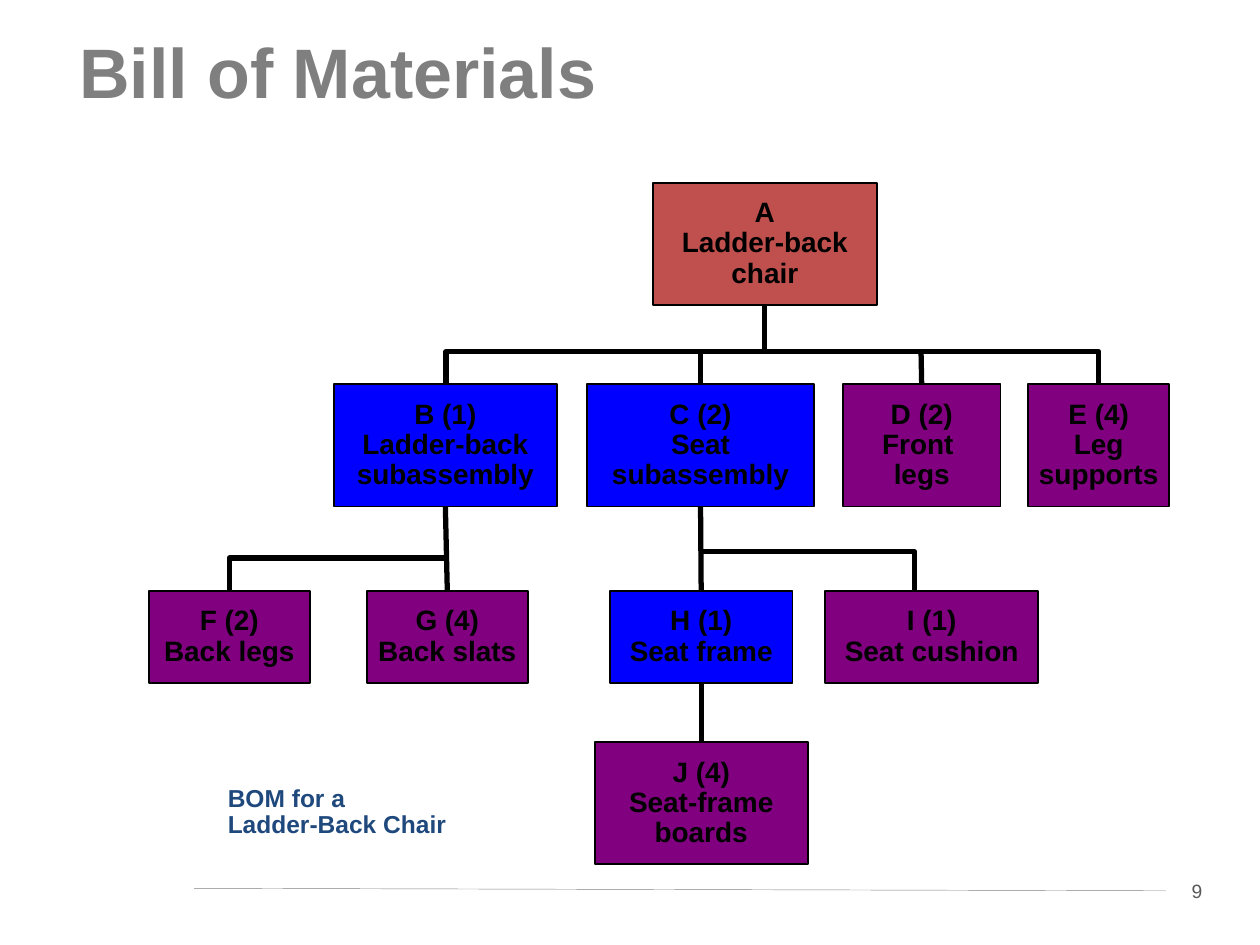
from lxml import etree
from pptx import Presentation
from pptx.dml.color import RGBColor
from pptx.enum.shapes import MSO_CONNECTOR as Connector, MSO_SHAPE as Shape
from pptx.enum.text import MSO_ANCHOR as Anchor, PP_ALIGN as Align
from pptx.oxml.ns import qn
from pptx.util import Inches, Pt

BLACK = RGBColor(0x00, 0x00, 0x00)
BLUE = RGBColor(0x00, 0x00, 0xFF)
PURPLE = RGBColor(0x80, 0x00, 0x80)
RED = RGBColor(0xC0, 0x50, 0x4D)
NAVY = RGBColor(0x1F, 0x49, 0x7D)
TITLE_GRAY = RGBColor(0x7F, 0x7F, 0x7F)
RULE_GRAY = RGBColor(0x80, 0x80, 0x80)
NUMBER_GRAY = RGBColor(0x59, 0x59, 0x59)

deck = Presentation()
deck.slide_width, deck.slide_height = Inches(10), Inches(7.5)
page = deck.slides.add_slide(deck.slide_layouts[5])


def style_text(frame, size, color, bold, align, spacing=1.0):
    for para in frame.paragraphs:
        para.alignment = align
        para.line_spacing = spacing
        for span in para.runs:
            span.font.name = "Arial"
            span.font.size = Pt(size)
            span.font.bold = bold
            span.font.color.rgb = color


def add_line(start, end, color=BLACK, width=3):
    line = page.shapes.add_connector(
        Connector.STRAIGHT, *[Inches(value) for value in (*start, *end)])
    line.line.color.rgb = color
    line.line.width = Pt(width)
    etree.SubElement(line._element.spPr, qn("a:effectLst"))
    return line


title = page.shapes.title
title.left, title.top = Inches(0.53), Inches(0.13)
title.width, title.height = Inches(8.94), Inches(1.01)
title.text_frame.text = "Bill of Materials"
title.text_frame.vertical_anchor = Anchor.TOP
title.text_frame.margin_top = Inches(0.1)
style_text(title.text_frame, 40, TITLE_GRAY, True, Align.LEFT)

add_line((1.54, 7.05), (9.25, 7.07), RULE_GRAY, 0.25)

branches = [
    [(3.54, 3.05), (3.54, 2.79), (8.72, 2.79), (8.72, 3.05)],
    [(1.82, 4.69), (1.82, 4.43), (3.53, 4.43)],
    [(7.26, 4.69), (7.26, 4.38), (5.56, 4.38)],
]
for points in branches:
    corners = [(Inches(x), Inches(y)) for x, y in points]
    builder = page.shapes.build_freeform(*corners[0])
    builder.add_line_segments(corners[1:], close=False)
    branch = builder.convert_to_shape()
    branch.shadow.inherit = False
    branch.fill.background()
    branch.line.color.rgb = BLACK
    branch.line.width = Pt(3)

parts = [
    ("A\nLadder-back\nchair", 5.18, 1.45, 1.78, 0.97, RED),
    ("B (1)\nLadder-back\nsubassembly", 2.65, 3.05, 1.77, 0.97, BLUE),
    ("C (2)\nSeat\nsubassembly", 4.66, 3.05, 1.8, 0.97, BLUE),
    ("D (2)\nFront \nlegs", 6.69, 3.05, 1.25, 0.97, PURPLE),
    ("E (4)\nLeg\nsupports", 8.16, 3.05, 1.12, 0.97, PURPLE),
    ("F (2)\nBack legs", 1.18, 4.69, 1.28, 0.73, PURPLE),
    ("G (4)\nBack slats", 2.91, 4.69, 1.28, 0.73, PURPLE),
    ("H (1)\nSeat frame", 4.84, 4.69, 1.45, 0.73, BLUE),
    ("I (1)\nSeat cushion", 6.55, 4.69, 1.69, 0.73, PURPLE),
    ("J (4)\nSeat-frame boards", 4.72, 5.89, 1.69, 0.97, PURPLE),
]
boxes = {}
for label, left, top, width, height, color in parts:
    box = page.shapes.add_shape(
        Shape.RECTANGLE, Inches(left), Inches(top), Inches(width), Inches(height))
    box.shadow.inherit = False
    box.fill.solid()
    box.fill.fore_color.rgb = color
    box.line.color.rgb = BLACK
    box.line.width = Pt(1)
    frame = box.text_frame
    frame.text = label
    frame.word_wrap = label[0] != "E"
    frame.vertical_anchor = Anchor.MIDDLE
    frame.margin_left = frame.margin_right = Inches(0.08)
    frame.margin_top = frame.margin_bottom = Inches(0.12)
    style_text(frame, 16, BLACK, True, Align.CENTER, 0.9)
    boxes[label[0]] = box

stem = add_line((6.07, 2.42), (6.07, 2.79))
stem.begin_connect(boxes["A"], 2)
for name, x in [("C", 5.56), ("D", 7.31)]:
    drop = add_line((x, 2.79), (x, 3.05))
    drop.end_connect(boxes[name], 0)
for parent, child in ["BG", "CH", "HJ"]:
    link = add_line((0, 0), (1, 1))
    link.begin_connect(boxes[parent], 2)
    link.end_connect(boxes[child], 0)

caption = page.shapes.add_textbox(Inches(1.71), Inches(6.19), Inches(1.94), Inches(0.51))
caption.text_frame.word_wrap = True
caption.text_frame.text = "BOM for a\vLadder-Back Chair"
style_text(caption.text_frame, 14, NAVY, True, Align.LEFT, 0.9)

number = page.shapes.add_textbox(Inches(9.25), Inches(6.93), Inches(0.5), Inches(0.29))
number.text_frame.word_wrap = True
number.text_frame.text = "9"
style_text(number.text_frame, 11, NUMBER_GRAY, False, Align.CENTER)

deck.save("out.pptx")
